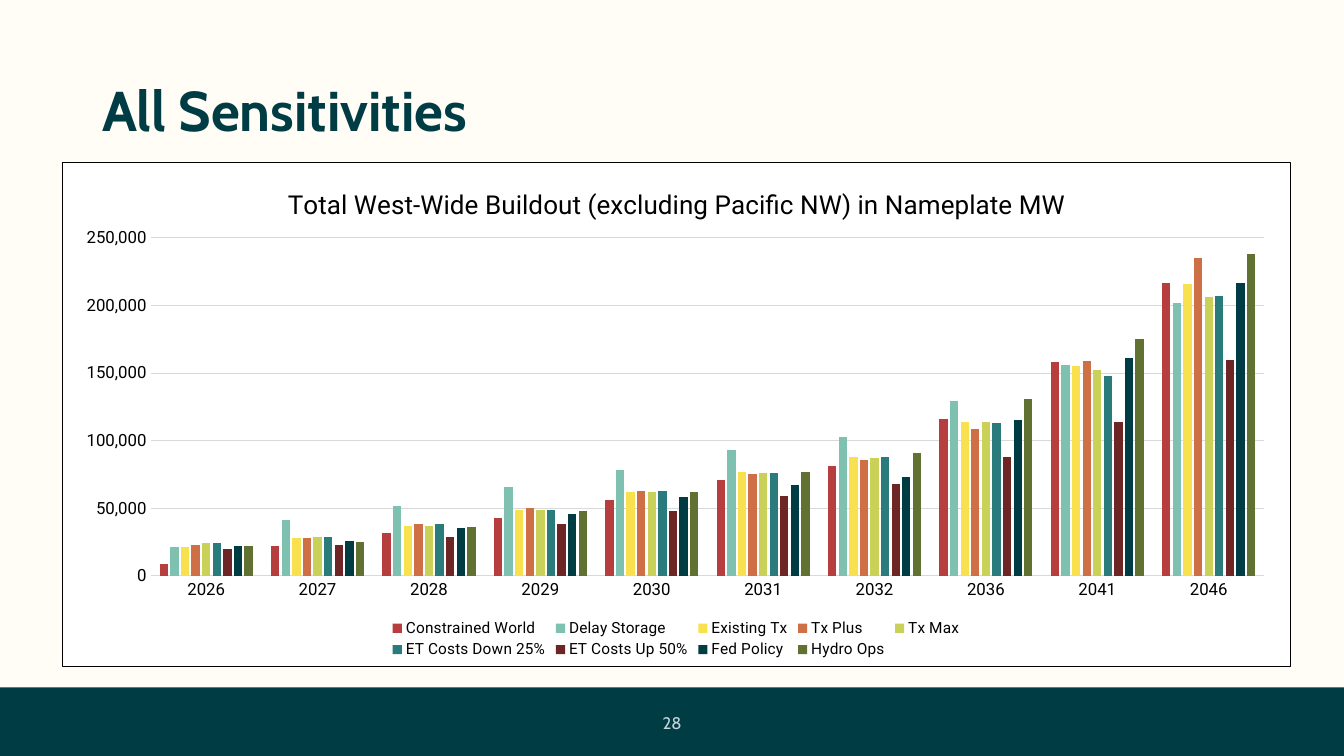
from lxml import etree
from pptx import Presentation, util as u
from pptx.chart import data as cd
from pptx.dml import color as dc
from pptx.enum import chart as ec, shapes, text
from pptx.oxml import ns, parse_xml

YEARS = ["2026", "2027", "2028", "2029", "2030", "2031", "2032", "2036", "2041", "2046"]
BUILDS = [
    ("Constrained World", "B73E3E", [9, 22, 32, 43, 56, 71, 81, 116, 158, 217]),
    ("Delay Storage", "7EC1B1", [21, 41, 52, 66, 78, 93, 103, 129, 156, 202]),
    ("Existing Tx", "F8E04E", [21, 28, 37, 49, 62, 77, 88, 114, 155, 216]),
    ("Tx Plus", "CE6F45", [23, 28, 38, 50, 63, 75, 86, 109, 159, 235]),
    ("Tx Max", "C9D159", [24, 29, 37, 49, 62, 76, 87, 114, 152, 206]),
    ("ET Costs Down 25%", "2A7C7C", [24, 29, 38, 49, 63, 76, 88, 113, 148, 207]),
    ("ET Costs Up 50%", "6E2525", [20, 23, 29, 38, 48, 59, 68, 88, 114, 160]),
    ("Fed Policy", "003C44", [22, 26, 35, 46, 58, 67, 73, 115, 161, 217]),
    ("Hydro Ops", "617131", [22, 25, 36, 48, 62, 77, 91, 131, 175, 238]),
]


def rgb(code):
    return dc.RGBColor.from_string(code)


def place(node, spot, **parts):
    for old in node.findall(ns.qn("c:layout")):
        node.remove(old)
    lay = etree.Element(ns.qn("c:layout"))
    man = etree.SubElement(lay, ns.qn("c:manualLayout"))
    for name, val in parts.items():
        etree.SubElement(man, ns.qn("c:" + name), val=str(val))
    node.insert(spot, lay)


class Deck:
    """Holds the style and the current slide, and draws each kind of element."""

    teal, cream, grid, black = "003C44", "FFFDF5", "D9D9D9", "000000"
    head, body = "Cabin", "Roboto"

    def __init__(self):
        self.prs = Presentation()
        self.prs.slide_width, self.prs.slide_height = u.Pt(960), u.Pt(540)
        self.slide = self.prs.slides.add_slide(self.prs.slide_layouts[6])
        self.paint(self.slide.background, self.cream)

    def paint(self, item, code):
        item.fill.solid()
        item.fill.fore_color.rgb = rgb(code)

    def type(self, font, name, size, code, bold=False):
        font.name, font.size, font.bold = name, u.Pt(size), bold
        font.color.rgb = rgb(code)

    def rule(self, line):
        line.color.rgb = rgb(self.grid)
        line.width = u.Pt(0.75)

    def bar(self, box, code):
        shape = self.slide.shapes.add_shape(shapes.MSO_SHAPE.RECTANGLE, *map(u.Pt, box))
        shape.shadow.inherit = False
        self.paint(shape, code)
        shape.line.fill.background()

    def text(self, box, words, size, code, bold=False, align="LEFT", pads=(7.2, 3.6, 7.2, 3.6)):
        frame = self.slide.shapes.add_textbox(*map(u.Pt, box)).text_frame
        frame.word_wrap = True
        frame.vertical_anchor = text.MSO_ANCHOR.MIDDLE
        (frame.margin_left, frame.margin_top,
         frame.margin_right, frame.margin_bottom) = map(u.Pt, pads)
        frame.text = words
        par = frame.paragraphs[0]
        par.alignment = text.PP_ALIGN[align]
        par.line_spacing = 0.9 if bold else 1.0
        self.type(par.runs[0].font, self.head, size, code, bold)
        return par.runs[0]

    def fade(self, run, share):
        fill = run.font.fill._xPr.find(ns.qn("a:solidFill"))
        etree.SubElement(fill[0], ns.qn("a:alpha"), val=str(share * 1000))

    def chart(self, box, title, years, builds):
        data = cd.CategoryChartData(number_format="#,##0")
        data.categories = years
        for name, _, vals in builds:
            data.add_series(name, [val * 1000 for val in vals])
        kind = ec.XL_CHART_TYPE.COLUMN_CLUSTERED
        chart = self.slide.shapes.add_chart(kind, *map(u.Pt, box), data).chart
        self.type(chart.font, self.body, 10, self.black)
        plot = chart.plots[0]
        plot.gap_width, plot.overlap, plot.vary_by_categories = 219, -27, False
        for series, (_, code, _) in zip(plot.series, builds):
            self.paint(series.format, code)
        self.axes(chart)
        chart.has_title = True
        frame = chart.chart_title.text_frame
        frame.text = title
        self.type(frame.paragraphs[0].runs[0].font, self.body, 18.6, self.black)
        chart.has_legend = True
        chart.legend.position = ec.XL_LEGEND_POSITION.BOTTOM
        chart.legend.include_in_layout = False
        self.type(chart.legend.font, self.body, 11, self.black)
        self.frame(chart)

    def axes(self, chart):
        cat, val = chart.category_axis, chart.value_axis
        for axis in (cat, val):
            axis.major_tick_mark = axis.minor_tick_mark = ec.XL_TICK_MARK.NONE
            self.type(axis.tick_labels.font, self.body, 12, self.black)
        self.rule(cat.format.line)
        val.format.line.fill.background()
        val.minimum_scale, val.maximum_scale, val.major_unit = 0, 250000, 50000
        val.tick_labels.number_format = "#,##0"
        val.tick_labels.number_format_is_linked = False
        val.has_major_gridlines = True
        self.rule(val.major_gridlines.format.line)

    def frame(self, chart):
        root = chart._chartSpace.find(ns.qn("c:chart"))
        edge = {"xMode": "edge", "yMode": "edge"}
        place(root.find(ns.qn("c:title")), 1, **edge, x=0.18, y=0.04)
        place(root.find(ns.qn("c:plotArea")), 0, layoutTarget="inner", **edge,
              x=0.072, y=0.15, w=0.907, h=0.67)
        place(root.find(ns.qn("c:legend")), 1, **edge, x=0.265, y=0.9, w=0.47, h=0.09)
        root.addnext(parse_xml(
            f'<c:spPr {ns.nsdecls("c", "a")}>'
            '<a:solidFill><a:srgbClr val="FFFFFF"/></a:solidFill>'
            f'<a:ln w="{u.Pt(0.75)}"><a:solidFill><a:srgbClr val="{self.black}"/>'
            '</a:solidFill></a:ln></c:spPr>'))


def main():
    deck = Deck()
    deck.bar((0, 491, 960, 49), deck.teal)
    page = deck.text((455, 501, 43, 31), "28", 12, "F9FBFD", align="CENTER",
                     pads=(7.2, 7.2, 0, 7.2))
    deck.fade(page, 80)
    deck.text((66, 29, 828, 104), "All Sensitivities", 40, deck.teal, bold=True)
    deck.chart((44, 115.6, 878, 361),
               "Total West-Wide Buildout (excluding Pacific NW) in Nameplate MW", YEARS, BUILDS)
    deck.prs.save("out.pptx")


if __name__ == "__main__":
    main()
